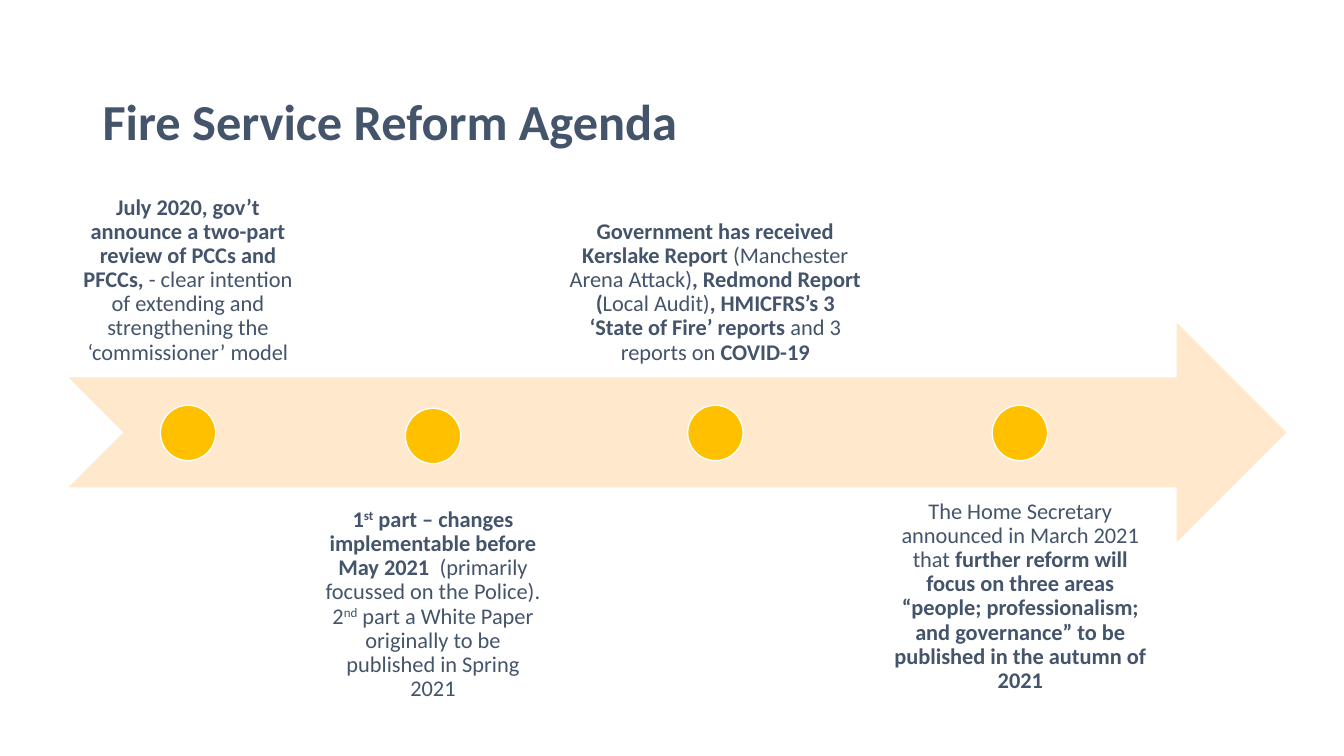
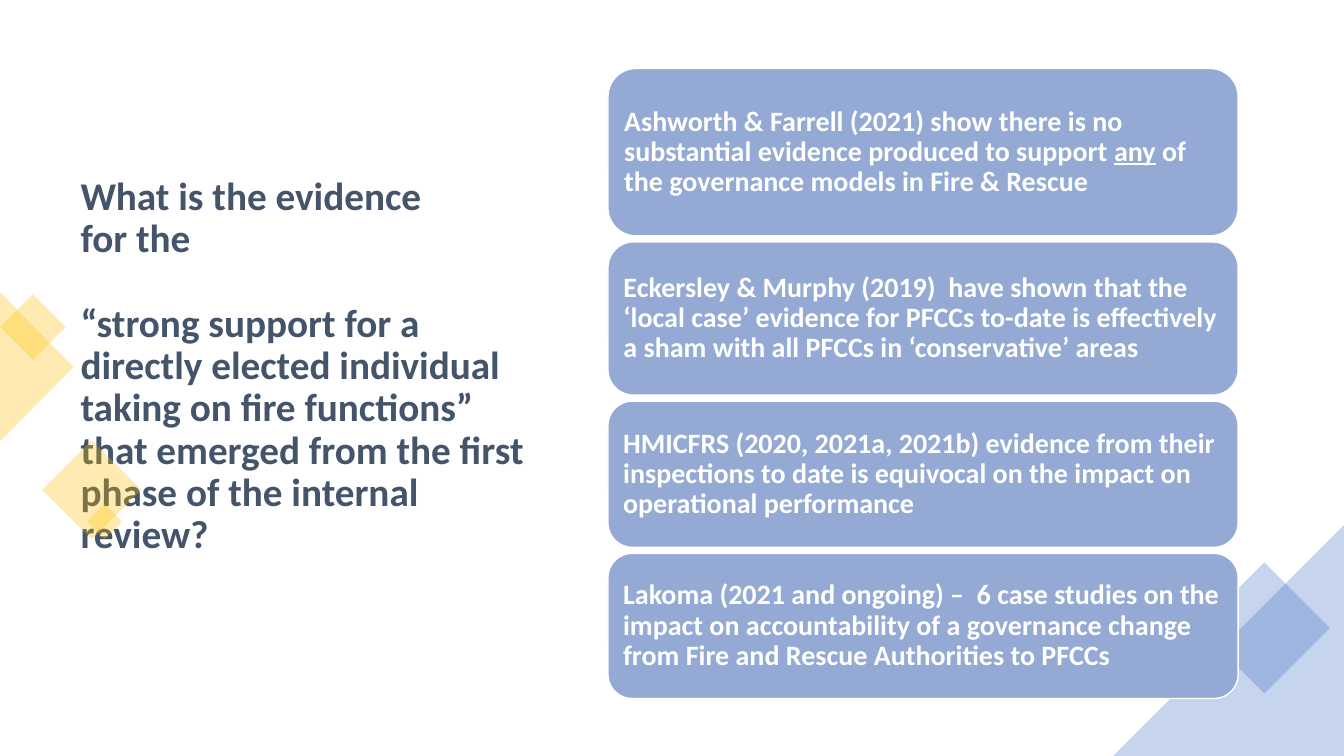
from lxml import etree
from pptx import Presentation
from pptx.dml.color import RGBColor
from pptx.enum.shapes import MSO_SHAPE
from pptx.enum.text import MSO_ANCHOR, PP_ALIGN
from pptx.oxml.ns import qn
from pptx.util import Pt

PX = 9144  # EMU per px, 100 px to the inch
FONT = "Calibri"
SLATE, WHITE, CREAM = "44546A", "FFFFFF", "FFE8CC"
GOLD, BLUE, PALE_BLUE = "FFC000", "4472C4", "94AAD4"
TOP, MIDDLE, BOTTOM = MSO_ANCHOR.TOP, MSO_ANCHOR.MIDDLE, MSO_ANCHOR.BOTTOM
LEFT, CENTER = PP_ALIGN.LEFT, PP_ALIGN.CENTER
ARROW, CIRCLE = MSO_SHAPE.NOTCHED_RIGHT_ARROW, MSO_SHAPE.OVAL
DIAMOND, ROUNDED = MSO_SHAPE.DIAMOND, MSO_SHAPE.ROUNDED_RECTANGLE
BOLD, PLAIN, UNDERLINED, RAISED = "bold", "plain", "underlined", "raised"


def paint(shape, color, outline=None, opacity=100):
    shape.shadow.inherit = False
    shape.fill.solid()
    shape.fill.fore_color.rgb = RGBColor.from_string(color)
    if opacity < 100:
        color_element = shape._element.spPr.find(qn("a:solidFill"))[0]
        etree.SubElement(color_element, qn("a:alpha"), val=str(opacity * 1000))
    if outline:
        shape.line.color.rgb = RGBColor.from_string(outline)
        shape.line.width = Pt(1)
    else:
        shape.line.fill.background()


def write(shape, paragraphs, size, color=SLATE, align=LEFT, anchor=MIDDLE, inset=None):
    """Fill a shape with paragraphs, each a list of (text, styles) runs."""
    frame = shape.text_frame
    frame.word_wrap = True
    frame.vertical_anchor = anchor
    if inset is not None:
        frame.margin_left = frame.margin_right = inset * PX
        frame.margin_top = frame.margin_bottom = inset * PX
    for number, pieces in enumerate(paragraphs):
        paragraph = frame.add_paragraph() if number else frame.paragraphs[0]
        paragraph.alignment = align
        paragraph.line_spacing = 0.9
        for text, *styles in pieces:
            run = paragraph.add_run()
            run.text = text
            run.font.name = FONT
            run.font.size = Pt(size)
            run.font.color.rgb = RGBColor.from_string(color)
            run.font.bold = BOLD in styles
            if UNDERLINED in styles:
                run.font.underline = True
            if RAISED in styles:
                run.font._element.set("baseline", "30000")


presentation = Presentation()
presentation.slide_width = 1333 * PX
presentation.slide_height = 750 * PX
blank_layout = presentation.slide_layouts[6]

# Slide 1: reform timeline
slide = presentation.slides.add_slide(blank_layout)
title = slide.shapes.add_textbox(92 * PX, 61 * PX, 1150 * PX, 124 * PX)
write(title, [[("Fire Service Reform Agenda", BOLD)]], 36)

arrow = slide.shapes.add_shape(ARROW, 68 * PX, 320 * PX, 1208 * PX, 218 * PX)
paint(arrow, CREAM)

# left, top, width, height, anchor, top of the dot, runs
milestones = [
    (68, 156, 237, 218, BOTTOM, 402, [
        ("July 2020, gov’t announce a two-part review of PCCs and PFCCs, ", BOLD),
        ("- clear intention of extending and strengthening the ‘commissioner’ model", PLAIN),
    ]),
    (308, 492, 243, 207, TOP, 405, [
        ("1", BOLD),
        ("st", BOLD, RAISED),
        (" part – changes implementable before May 2021  ", BOLD),
        ("(primarily focussed on the Police). 2", PLAIN),
        ("nd", RAISED),
        (" part a White Paper originally to be published in Spring 2021", PLAIN),
    ]),
    (553, 156, 313, 218, BOTTOM, 402, [
        ("Government has received Kerslake Report ", BOLD),
        ("(Manchester Arena Attack)", PLAIN),
        (", Redmond Report (", BOLD),
        ("Local Audit)", PLAIN),
        (", HMICFRS’s 3 ‘State of Fire’ reports ", BOLD),
        ("and 3 reports on ", PLAIN),
        ("COVID-19", BOLD),
    ]),
    (869, 484, 286, 218, TOP, 402, [
        ("The Home Secretary announced in March 2021 that ", PLAIN),
        ("further reform will focus on three areas “people; professionalism; "
         "and governance” to be published in the autumn of 2021", BOLD),
    ]),
]
DOT = 55
for left, top, width, height, anchor, dot_top, pieces in milestones:
    label = slide.shapes.add_textbox(left * PX, top * PX, width * PX, height * PX)
    write(label, [pieces], 16, align=CENTER, anchor=anchor, inset=12)
    dot_left = left + (width - DOT) // 2
    dot = slide.shapes.add_shape(CIRCLE, dot_left * PX, dot_top * PX, DOT * PX, DOT * PX)
    paint(dot, GOLD, outline=WHITE)

# Slide 2: evidence
slide = presentation.slides.add_slide(blank_layout)
title = slide.shapes.add_textbox(70 * PX, 68 * PX, 481 * PX, 592 * PX)
question = [
    [("What is the evidence", BOLD)],
    [("for the", BOLD)],
    [("“strong support for a directly elected individual taking on fire functions” "
      "that emerged from the first phase of the internal review?", BOLD)],
]
write(title, question, 28)
title.text_frame.paragraphs[-1].space_before = Pt(30)

corner_triangles = [
    (GOLD, [(0, 290), (73, 364), (0, 438)]),
    (BLUE, [(1104, 750), (1333, 521), (1333, 750)]),
]
for color, (start, *others) in corner_triangles:
    builder = slide.shapes.build_freeform(*start, scale=PX)
    builder.add_line_segments(others, close=True)
    paint(builder.convert_to_shape(), color, opacity=30)

diamonds = [
    (GOLD, 0, 292, 65),
    (GOLD, 42, 437, 98),
    (GOLD, 86, 500, 35),
    (BLUE, 1189, 558, 130),
]
for color, left, top, size in diamonds:
    diamond = slide.shapes.add_shape(DIAMOND, left * PX, top * PX, size * PX, size * PX)
    paint(diamond, color, opacity=30)

findings = [
    (166, [
        ("Ashworth & Farrell (2021) show there is no substantial evidence "
         "produced to support ", BOLD),
        ("any", BOLD, UNDERLINED),
        (" of the governance models in Fire & Rescue", BOLD),
    ]),
    (152, [("Eckersley & Murphy (2019)  have shown that the ‘local case’ evidence for PFCCs "
            "to-date is effectively a sham with all PFCCs in ‘conservative’ areas", BOLD)]),
    (145, [("HMICFRS (2020, 2021a, 2021b) evidence from their inspections to date is "
            "equivocal on the impact on operational performance", BOLD)]),
    (144, [("Lakoma (2021 and ongoing) –  6 case studies on the impact on accountability of a "
            "governance change from Fire and Rescue Authorities to PFCCs", BOLD)]),
]
CARD_GAP = 6
card_top = 68
for height, pieces in findings:
    card = slide.shapes.add_shape(ROUNDED, 603 * PX, card_top * PX, 625 * PX, height * PX)
    paint(card, PALE_BLUE, outline=WHITE)
    write(card, [pieces], 20, color=WHITE, inset=8)
    card_top += height + CARD_GAP

presentation.save("out.pptx")
